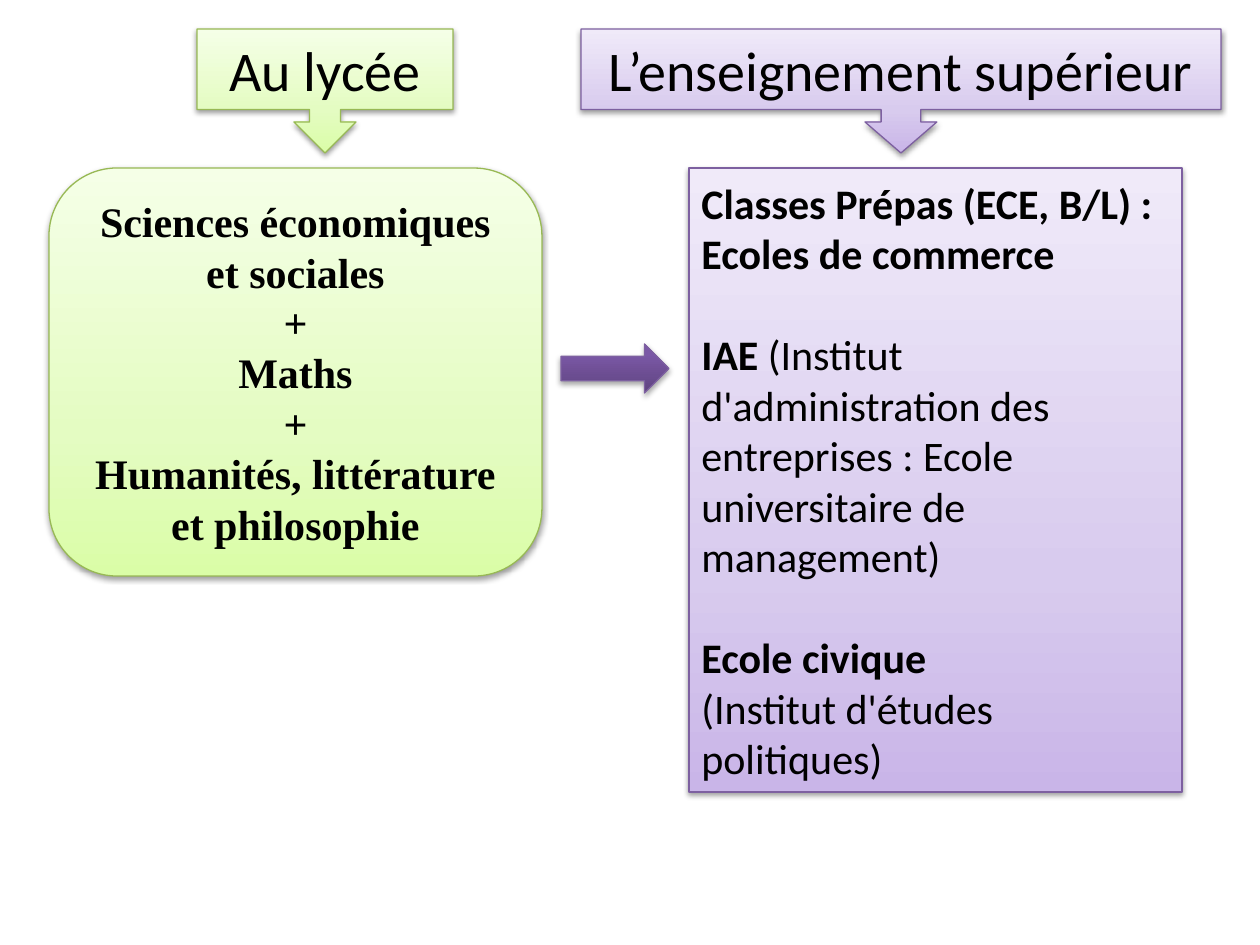
import copy
from dataclasses import dataclass

import pptx
import pptx.dml.color
import pptx.enum.shapes
import pptx.enum.text
import pptx.oxml
import pptx.oxml.ns
import pptx.util

PX = 914400 / 126
SHAPE = pptx.enum.shapes.MSO_SHAPE
ALIGN = pptx.enum.text.PP_ALIGN


@dataclass(frozen=True)
class Paint:
    stops: tuple
    line: str
    shadow: tuple = (38, 20000)


@dataclass(frozen=True)
class Theme:
    green: Paint = Paint(((0, "DAFDA7"), (0.35, "E4FCC2"), (1, "F5FFE7")), "98B955")
    lilac: Paint = Paint(((0, "C9B5E8"), (0.35, "D8CBEE"), (1, "F0EAF9")), "7D60A0")
    violet: Paint = Paint(((0, "5F4480"), (0.8, "7B58A6"), (1, "7C57A8")), "7D60A0", (35, 23000))
    ink: str = "000000"
    sans: str = "Calibri"
    serif: str = "Times New Roman"
    heading: int = 32
    body: int = 24
    gap: int = 29


THEME = Theme()


def px(length):
    return pptx.util.Emu(round(length * PX))


def rgb(value):
    return pptx.dml.color.RGBColor.from_string(value)


def apply_format(target, values):
    for name, value in values.items():
        setattr(target, name, value)


def paint_fill(shape, stops):
    shape.fill.gradient()
    shape.fill.gradient_angle = 90
    stop_list = shape.fill.gradient_stops[0]._gs.getparent()
    stop_list.append(copy.deepcopy(stop_list[0]))
    for stop, (position, color) in zip(shape.fill.gradient_stops, stops):
        stop.position = position
        stop.color.rgb = rgb(color)


def paint_shadow(shape, opacity, distance):
    shape.shadow.inherit = False
    effects = shape._element.spPr.find(pptx.oxml.ns.qn("a:effectLst"))
    effects.append(pptx.oxml.parse_xml(
        f'<a:outerShdw {pptx.oxml.ns.nsdecls("a")} blurRad="40000" dist="{distance}" '
        f'dir="5400000" rotWithShape="0"><a:srgbClr val="{THEME.ink}">'
        f'<a:alpha val="{opacity * 1000}"/></a:srgbClr></a:outerShdw>'))


def add_box(page, kind, bounds, paint, adjustments=()):
    box = page.shapes.add_shape(kind, *map(px, bounds))
    for index, value in enumerate(adjustments):
        box.adjustments[index] = value
    paint_fill(box, paint.stops)
    box.line.color.rgb = rgb(paint.line)
    box.line.width = pptx.util.Pt(0.75)
    paint_shadow(box, *paint.shadow)
    return box


def write_text(box, paragraphs, font, size, align):
    frame = box.text_frame
    apply_format(frame, {
        "word_wrap": True,
        "auto_size": pptx.enum.text.MSO_AUTO_SIZE.SHAPE_TO_FIT_TEXT,
        "vertical_anchor": pptx.enum.text.MSO_ANCHOR.MIDDLE,
    })
    for index, (gap, spans) in enumerate(paragraphs):
        para = frame.add_paragraph() if index else frame.paragraphs[0]
        apply_format(para, {"alignment": align, "space_before": pptx.util.Pt(gap)})
        for text, bold in spans:
            span = para.add_run()
            span.text = text
            apply_format(span.font, {"name": font, "size": pptx.util.Pt(size), "bold": bold})
            span.font.color.rgb = rgb(THEME.ink)


def add_heading(page, text, left, width, paint, adjustments=()):
    box = add_box(page, SHAPE.DOWN_ARROW_CALLOUT, (left, 29, width, 124), paint, adjustments)
    write_text(box, [(0, [(text, False)])], THEME.sans, THEME.heading, ALIGN.CENTER)


def add_subjects(page):
    subjects = ["Sciences économiques et sociales", "+", "Maths", "+",
                "Humanités, littérature et philosophie"]
    box = add_box(page, SHAPE.ROUNDED_RECTANGLE, (49, 168, 493, 408), THEME.green)
    write_text(box, [(0, [(subject, True)]) for subject in subjects],
               THEME.serif, THEME.body, ALIGN.CENTER)


def add_schools(page):
    schools = [
        (0, [("Classes Prépas (ECE, B/L) : Ecoles de commerce", True)]),
        (THEME.gap, [("IAE ", True),
                     ("(Institut d'administration des entreprises : "
                      "Ecole universitaire de management)", False)]),
        (THEME.gap, [("Ecole civique", True)]),
        (0, [("(Institut d'études politiques)", False)]),
    ]
    box = add_box(page, SHAPE.RECTANGLE, (689, 168, 493, 624), THEME.lilac)
    write_text(box, schools, THEME.sans, THEME.body, ALIGN.LEFT)


def main():
    deck = pptx.Presentation()
    apply_format(deck, {"slide_width": px(1260), "slide_height": px(945)})
    page = deck.slides.add_slide(deck.slide_layouts[6])
    add_subjects(page)
    add_heading(page, "Au lycée", 197, 256, THEME.green)
    add_heading(page, "L’enseignement supérieur", 581, 640, THEME.lilac,
                (0.32, 0.29, 0.25, 0.65))
    add_schools(page)
    add_box(page, SHAPE.RIGHT_ARROW, (561, 344, 108, 49), THEME.violet)
    deck.save("out.pptx")


if __name__ == "__main__":
    main()
